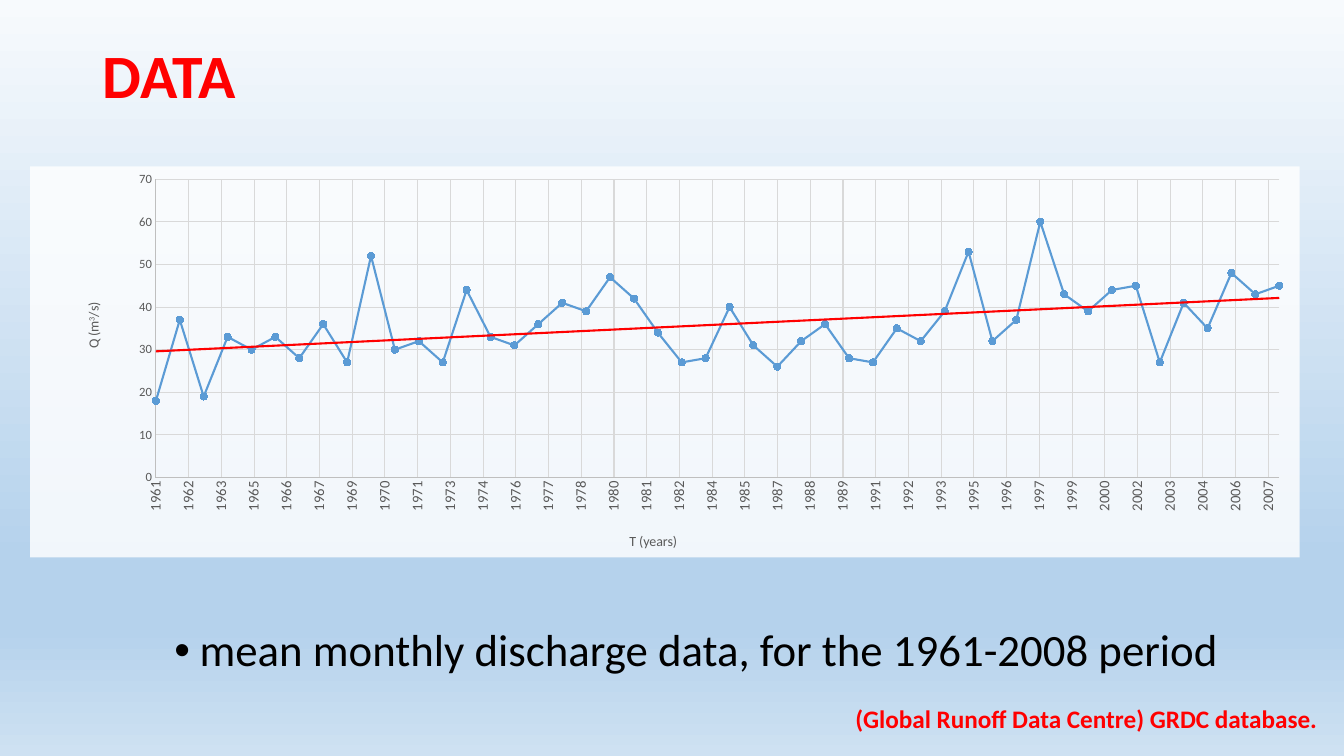
from lxml import etree
from pptx import Presentation
from pptx import util as u
from pptx.chart import data as cd
from pptx.dml.color import RGBColor
from pptx.enum import chart as ch, text as tx
from pptx.oxml import parse_xml
from pptx.oxml.ns import nsdecls, qn

HUES = {"red": "FF0000", "black": "000000", "blue": "5B9BD5", "grey": "595959",
        "grid": "D9D9D9", "axis": "BFBFBF", "white": "FFFFFF"}
SKY = [(0, "F7FAFD"), (74, "B5D2EC"), (83, "B5D2EC"), (100, "CEE1F2")]
FACE = "Calibri"

# Yearly discharge, 1961 to 2008; dates are day numbers
START, END, YEAR = 22282, 39448, 365.23
FLOW = [18, 37, 19, 33, 30, 33, 28, 36, 27, 52, 30, 32, 27, 44, 33, 31,
        36, 41, 39, 47, 42, 34, 27, 28, 40, 31, 26, 32, 36, 28, 27, 35,
        32, 39, 53, 32, 37, 60, 43, 39, 44, 45, 27, 41, 35, 48, 43, 45]


def rgb(name):
    return RGBColor.from_string(HUES[name])


def style(font, size, hue, bold=False):
    font.name, font.size, font.bold = FACE, u.Pt(size), bold
    font.color.rgb = rgb(hue)


def stroke(line, hue, width):
    line.color.rgb = rgb(hue)
    line.width = u.Pt(width)


def sky(slide):
    """Vertical gradient behind the slide."""
    fill = slide.background.fill
    fill.gradient()
    fill.gradient_angle = 270
    stops = slide.element.find(".//" + qn("a:gsLst"))
    for old in list(stops):
        stops.remove(old)
    for pos, hue in SKY:
        stop = etree.SubElement(stops, qn("a:gs"), pos=str(pos * 1000))
        etree.SubElement(stop, qn("a:srgbClr"), val=hue)


def label(slide, box, words, size, hue, bold=False, wrap=True):
    """One line of text in a box; returns its frame."""
    frame = slide.shapes.add_textbox(*map(u.Inches, box)).text_frame
    frame.word_wrap = wrap
    frame.text = words
    style(frame.paragraphs[0].runs[0].font, size, hue, bold)
    return frame


def heading(slide, box):
    frame = label(slide, box, "DATA", 44, "red", True)
    frame.vertical_anchor = tx.MSO_ANCHOR.MIDDLE
    frame.paragraphs[0].line_spacing = 0.9


def note(slide, box):
    """Centred bullet under the chart."""
    words = "mean monthly discharge data, for the 1961-2008 period"
    para = label(slide, box, words, 32, "black").paragraphs[0]
    para.alignment = tx.PP_ALIGN.CENTER
    para.line_spacing, para.space_before = 0.9, u.Pt(10)
    props = para._p.get_or_add_pPr()
    props.set("marL", str(u.Inches(0.25)))
    props.set("indent", str(-u.Inches(0.25)))
    etree.SubElement(props, qn("a:buFont"), typeface="Arial")
    etree.SubElement(props, qn("a:buChar"), char="•")


def source(slide, box):
    words = "(Global Runoff Data Centre) GRDC database."
    frame = label(slide, box, words, 18, "red", True, False)
    frame.paragraphs[0].alignment = tx.PP_ALIGN.CENTER


def layout(x, y, w=None, h=None):
    """Manual chart layout in fractions of the chart."""
    root = parse_xml(f"<c:layout {nsdecls('c')}><c:manualLayout/></c:layout>")
    parts = [("xMode", "edge"), ("yMode", "edge"), ("x", x), ("y", y)]
    if w:
        parts = [("layoutTarget", "inner")] + parts + [("w", w), ("h", h)]
    for tag, val in parts:
        etree.SubElement(root[0], qn("c:" + tag), val=str(val))
    return root


def place(title, x, y):
    """Puts an axis title at a fixed spot."""
    root = title._element
    old = root.find(qn("c:layout"))
    if old is not None:
        root.remove(old)
    root.find(qn("c:tx")).addnext(layout(x, y))


def scale(axis, low, high, step, size, words):
    """Range, grid, labels and title of an axis; returns the title."""
    axis.minimum_scale, axis.maximum_scale, axis.major_unit = low, high, step
    axis.major_tick_mark = axis.minor_tick_mark = ch.XL_TICK_MARK.NONE
    axis.has_major_gridlines = True
    stroke(axis.major_gridlines.format.line, "grid", 0.75)
    stroke(axis.format.line, "axis", 0.75)
    style(axis.tick_labels.font, size, "grey")
    para = axis.axis_title.text_frame.paragraphs[0]
    for part in words:
        run = para.add_run()
        run.text = part
        style(run.font, 10, "grey")
    return axis.axis_title


def turn(body):
    body.set("rot", "-5400000")
    body.set("vert", "horz")


def graph(slide, box):
    data = cd.XyChartData()
    flow = data.add_series("Series 1")
    for i, val in enumerate(FLOW):
        flow.add_data_point(round(START + YEAR * i), val)
    kind = ch.XL_CHART_TYPE.XY_SCATTER_SMOOTH
    chart = slide.shapes.add_chart(kind, *map(u.Inches, box), data).chart
    chart.has_legend = chart.has_title = False
    style(chart.font, 10, "black")
    chart.plots[0].vary_by_categories = False

    # Axes
    time, rate = chart.category_axis, chart.value_axis
    title = scale(time, START, END, 500, 10.5, ["T (years)"])
    place(title, 0.47, 0.93)
    time.tick_labels.number_format = "yyyy"
    time.tick_labels.number_format_is_linked = False
    turn(time._element.find(qn("c:txPr")).find(qn("a:bodyPr")))
    title = scale(rate, 0, 70, 10, 9, ["Q (m", "3", "/s)"])
    title.text_frame.paragraphs[0].runs[1].font._element.set("baseline", "30000")
    turn(title._element.find(".//" + qn("a:bodyPr")))
    place(title, 0.04, 0.34)

    # Curve and its markers
    line = chart.plots[0].series[0]
    line.smooth = True
    stroke(line.format.line, "blue", 1.5)
    mark = line.marker
    mark.style, mark.size = ch.XL_MARKER_STYLE.CIRCLE, 5
    mark.format.fill.solid()
    mark.format.fill.fore_color.rgb = rgb("blue")
    stroke(mark.format.line, "blue", 0.75)

    # Linear trend
    trend = parse_xml(
        f'<c:trendline {nsdecls("c", "a")}><c:spPr><a:ln w="{u.Pt(1.5)}">'
        f'<a:solidFill><a:srgbClr val="{HUES["red"]}"/></a:solidFill></a:ln></c:spPr>'
        '<c:trendlineType val="linear"/><c:dispRSqr val="0"/><c:dispEq val="0"/>'
        '</c:trendline>')
    line._element.find(qn("c:xVal")).addprevious(trend)

    # Plot position and pale panel
    root = chart._chartSpace.find(qn("c:chart"))
    plot = root.find(qn("c:plotArea"))
    old = plot.find(qn("c:layout"))
    if old is not None:
        plot.remove(old)
    plot.insert(0, layout(0.099, 0.033, 0.885, 0.763))
    root.addnext(parse_xml(
        f'<c:spPr {nsdecls("c", "a")}><a:solidFill><a:srgbClr val="{HUES["white"]}">'
        '<a:alpha val="82000"/></a:srgbClr></a:solidFill><a:ln><a:noFill/></a:ln></c:spPr>'))


def main():
    deck = Presentation()
    deck.slide_width, deck.slide_height = u.Inches(13.33), u.Inches(7.5)
    slide = deck.slides.add_slide(deck.slide_layouts[6])
    sky(slide)
    note(slide, (0.56, 6.18, 12.7, 0.75))
    graph(slide, (0.3, 1.65, 12.59, 3.88))
    source(slide, (8.3, 6.93, 4.95, 0.4))
    heading(slide, (0.92, 0.4, 5.07, 0.75))
    deck.save("out.pptx")


if __name__ == "__main__":
    main()
